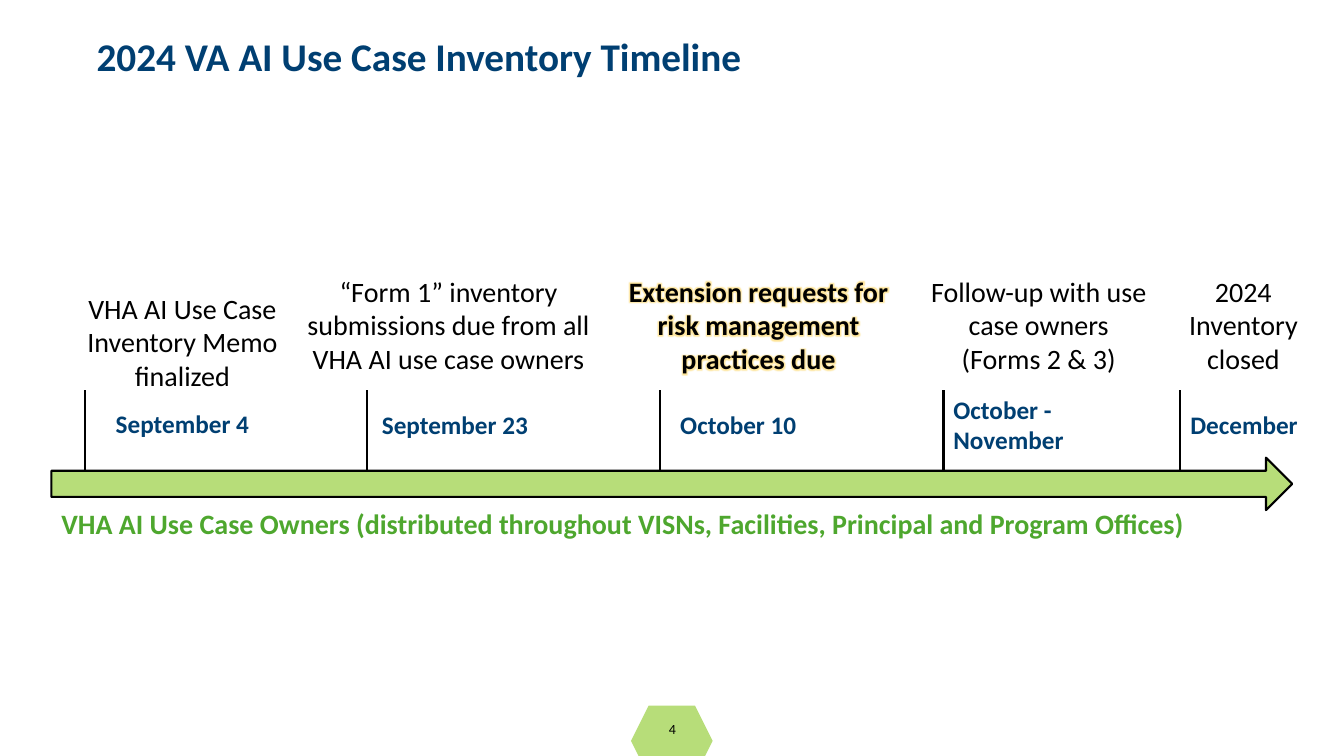
from lxml import etree
from pptx import Presentation
from pptx.dml.color import RGBColor
from pptx.enum.shapes import MSO_CONNECTOR, MSO_SHAPE
from pptx.enum.text import MSO_ANCHOR, MSO_AUTO_SIZE, PP_ALIGN
from pptx.oxml import parse_xml
from pptx.oxml.ns import nsdecls, qn
from pptx.util import Inches, Pt

STRAIGHT = MSO_CONNECTOR.STRAIGHT
HEXAGON, RIGHT_ARROW = MSO_SHAPE.HEXAGON, MSO_SHAPE.RIGHT_ARROW
TOP = MSO_ANCHOR.TOP
GROW, FIXED = MSO_AUTO_SIZE.SHAPE_TO_FIT_TEXT, MSO_AUTO_SIZE.NONE
LEFT, CENTER = PP_ALIGN.LEFT, PP_ALIGN.CENTER

NAVY = RGBColor(0x00, 0x3F, 0x72)
LIME = RGBColor(0xB7, 0xDD, 0x79)
GREEN = RGBColor(0x4E, 0xA7, 0x2E)
BLACK = RGBColor(0x00, 0x00, 0x00)
GOLD = RGBColor(0xFF, 0xC0, 0x00)

COLUMNS, ROWS = 40, 30
TICK_TOP, TICK_BOTTOM = 15.48, 18.64
EVENT_ROW, EVENT_ROWS = 10.68, 4.44
DATE_ROW, DATE_ROWS = 16.04, 1.6

MILESTONES = [
    dict(tick=2.52, date="September 4", date_at=(3.15, 16, 5.07, DATE_ROWS),
         event="VHA AI Use Case Inventory Memo finalized",
         event_at=(1.35, 11.36, 8.16, EVENT_ROWS)),
    dict(tick=10.92, date="September 23", date_at=(11.07, DATE_ROW, 5.97, DATE_ROWS),
         event="“Form 1” inventory submissions due from all VHA AI use case owners",
         event_at=(8.76, EVENT_ROW, 9.18, EVENT_ROWS)),
    dict(tick=19.65, date="October 10", date_at=(19.95, DATE_ROW, 5.13, DATE_ROWS),
         event="Extension requests for risk management practices due",
         event_at=(18, EVENT_ROW, 9.15, EVENT_ROWS), key=True),
    dict(tick=28.08, date="October - November", date_at=(28.08, 15.44, 4.38, 2.84),
         event="Follow-up with use case owners (Forms 2 & 3)",
         event_at=(27.3, EVENT_ROW, 7.23, EVENT_ROWS)),
    dict(tick=35.13, date="December", date_at=(35.13, DATE_ROW, 3.99, DATE_ROWS),
         event="2024 Inventory closed",
         event_at=(34.65, EVENT_ROW, 4.71, EVENT_ROWS)),
]


class TimelinePage:
    font = "Calibri"
    line_width = Pt(1.5)

    def __init__(self, deck):
        self.column = deck.slide_width / COLUMNS
        self.row = deck.slide_height / ROWS
        self.page = deck.slides.add_slide(deck.slide_layouts[6])

    def place(self, left, top, width, height):
        return (round(left * self.column), round(top * self.row),
                round(width * self.column), round(height * self.row))

    def shape(self, kind, at, outline=None):
        shape = self.page.shapes.add_shape(kind, *self.place(*at))
        shape.shadow.inherit = False
        shape.fill.solid()
        shape.fill.fore_color.rgb = LIME
        if outline is None:
            shape.line.fill.background()
        else:
            shape.line.color.rgb = outline
            shape.line.width = self.line_width

    def text(self, words, at, size, color, bold=False, align=LEFT,
             auto_size=GROW, space_after=0, glow=False):
        box = self.page.shapes.add_textbox(*self.place(*at))
        frame = box.text_frame
        frame.word_wrap = True
        frame.auto_size = auto_size
        frame.vertical_anchor = TOP
        para = frame.paragraphs[0]
        para.alignment = align
        para.space_after = Pt(space_after)
        span = para.add_run()
        span.text = words
        span.font.name = self.font
        span.font.size = Pt(size)
        span.font.bold = bold
        span.font.color.rgb = color
        if glow:
            self.glow(span)

    def glow(self, span):
        effect = parse_xml(
            f'<a:effectLst {nsdecls("a")}><a:glow rad="63500">'
            f'<a:srgbClr val="{GOLD}"><a:alpha val="40000"/></a:srgbClr>'
            '</a:glow></a:effectLst>')
        span.font._element.find(qn("a:latin")).addprevious(effect)

    def tick(self, column):
        left, bottom, _, _ = self.place(column, TICK_BOTTOM, 0, 0)
        _, top, _, _ = self.place(column, TICK_TOP, 0, 0)
        line = self.page.shapes.add_connector(STRAIGHT, left, bottom, left, top)
        line.line.color.rgb = BLACK
        line.line.width = self.line_width
        etree.SubElement(line._element.spPr, qn("a:effectLst"))

    def milestone(self, tick, date, date_at, event, event_at, key=False):
        self.tick(tick)
        self.text(date, date_at, 18, NAVY, bold=True)
        self.text(event, event_at, 20, BLACK, bold=key, align=CENTER, glow=key)


def main():
    deck = Presentation()
    deck.slide_width, deck.slide_height = Inches(13.33), Inches(7.5)
    timeline = TimelinePage(deck)
    timeline.shape(HEXAGON, (18.78, 28, 2.43, 2.8))
    timeline.text("2024 VA AI Use Case Inventory Timeline", (2.58, 1.08, 26.79, 2.84),
                  28, NAVY, bold=True, auto_size=FIXED, space_after=6)
    timeline.text("4", (15.51, 28.4, 9, 1.6), 10, BLACK, align=CENTER, auto_size=FIXED)
    timeline.shape(RIGHT_ARROW, (1.53, 18.16, 36.93, 2.08), outline=BLACK)
    timeline.text("VHA AI Use Case Owners (distributed throughout VISNs, Facilities, "
                  "Principal and Program Offices)",
                  (1.53, 19.92, 34.95, 1.76), 20, GREEN, bold=True)
    for milestone in MILESTONES:
        timeline.milestone(**milestone)
    deck.save("out.pptx")


if __name__ == "__main__":
    main()
